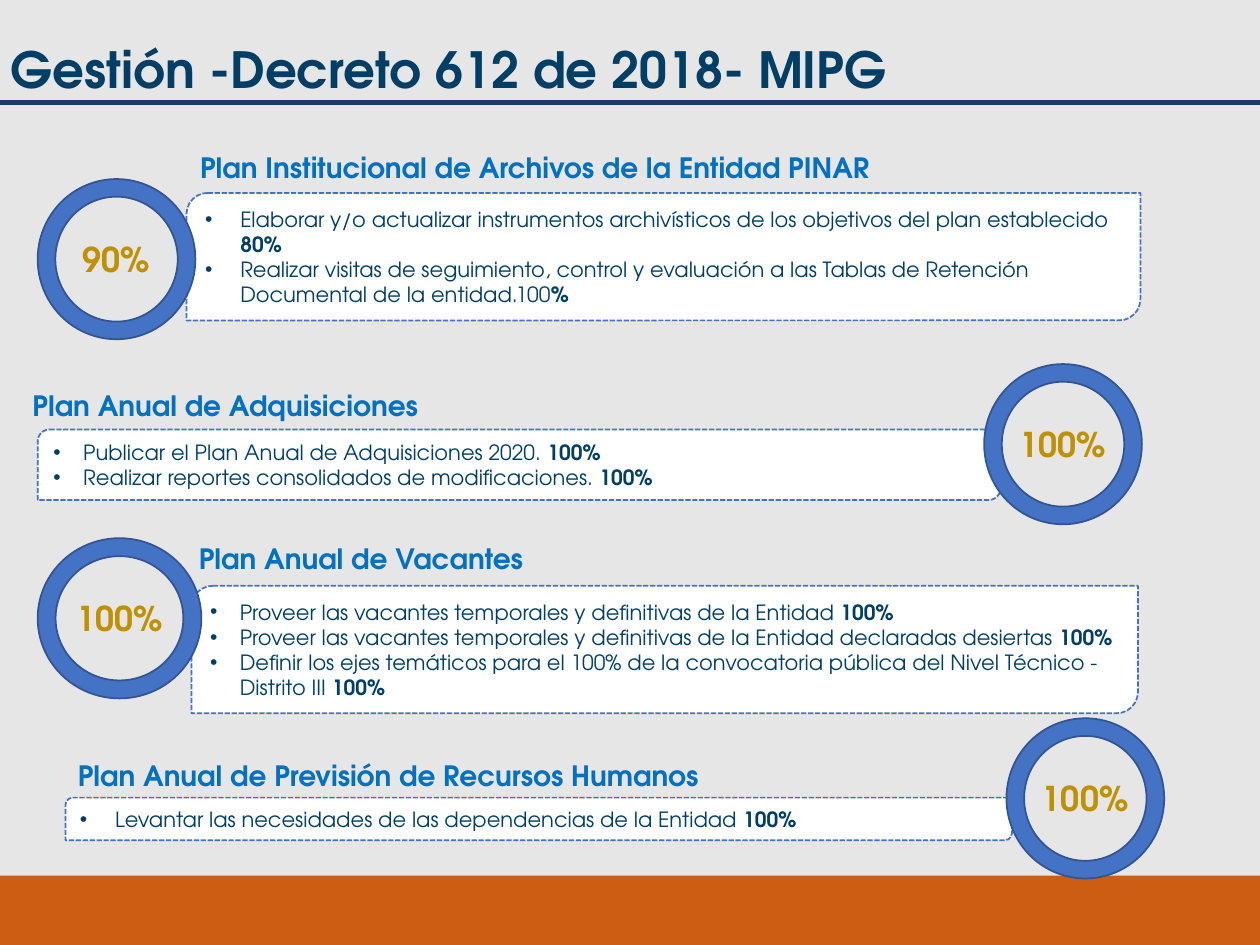
from dataclasses import dataclass

from lxml import etree
from pptx import Presentation
from pptx.dml.color import RGBColor
from pptx.enum.dml import MSO_LINE
from pptx.enum.shapes import MSO_CONNECTOR, MSO_SHAPE
from pptx.enum.text import MSO_ANCHOR, PP_ALIGN
from pptx.oxml.ns import qn
from pptx.util import Cm, Pt

RECT, DONUT = MSO_SHAPE.RECTANGLE, MSO_SHAPE.DONUT
PANEL = MSO_SHAPE.ROUND_2_DIAG_RECTANGLE
STRAIGHT = MSO_CONNECTOR.STRAIGHT
DASH = MSO_LINE.SQUARE_DOT
LEFT, CENTER = PP_ALIGN.LEFT, PP_ALIGN.CENTER
MIDDLE = MSO_ANCHOR.MIDDLE


@dataclass(frozen=True)
class Theme:
    font: str = "TeX Gyre Adventor"
    back: str = "E7E6E6"
    band: str = "CC5D12"
    rule: str = "203864"
    ink: str = "003E65"
    head: str = "0070C0"
    gold: str = "BF9000"
    ring: str = "4472C4"
    edge: str = "325491"
    panel: str = "FFFFFF"
    title_size: float = 28.5
    head_size: float = 16
    ring_size: float = 19.5
    body_size: float = 12


@dataclass(frozen=True)
class Box:
    """A frame in centimetres."""
    left: float
    top: float
    width: float
    height: float

    def cm(self) -> tuple:
        return Cm(self.left), Cm(self.top), Cm(self.width), Cm(self.height)


@dataclass(frozen=True)
class Plan:
    name: str
    score: str
    head: Box
    ring: Box
    panel: Box
    indent: float
    tasks: tuple  # pairs of plain text and bold ending
    fit: bool = False  # heading is centred and does not wrap


THEME = Theme()
HEAD, RING = 0.94, 3.23
PLANS = (
    Plan("Plan Institucional de Archivos de la Entidad PINAR", "90%",
         Box(3.61, 2.92, 14.35, HEAD), Box(0.76, 3.61, 3.18, RING),
         Box(3.76, 3.89, 19.23, 2.57), 0.71,
         (("Elaborar y/o actualizar instrumentos archivísticos de los "
           "objetivos del plan establecido ", "80%"),
          ("Realizar visitas de seguimiento, control y evaluación a las Tablas "
           "de Retención Documental de la entidad.100", "%")), True),
    Plan("Plan Anual de Adquisiciones", "100%",
         Box(0.38, 7.7, 8.33, HEAD), Box(19.84, 7.34, 3.18, RING),
         Box(0.76, 8.66, 19.41, 1.42), 0.6,
         (("Publicar el Plan Anual de Adquisiciones 2020. ", "100%"),
          ("Realizar reportes consolidados de modificaciones. ", "100%")), True),
    Plan("Plan Anual de Vacantes", "100%",
         Box(3.76, 10.8, 7.72, HEAD), Box(0.76, 10.85, 3.3, RING),
         Box(3.86, 11.81, 19.08, 2.57), 0.6,
         (("Proveer las vacantes temporales y definitivas de la Entidad ",
           "100%"),
          ("Proveer las vacantes temporales y definitivas de la Entidad "
           "declaradas desiertas ", "100%"),
          ("Definir los ejes temáticos para el 100% de la convocatoria pública "
           "del Nivel Técnico - Distrito III ", "100%"))),
    Plan("Plan Anual de Previsión de Recursos Humanos", "100%",
         Box(1.32, 15.16, 16.26, HEAD), Box(20.29, 14.48, 3.18, RING),
         Box(1.32, 16.08, 19.08, 0.86), 0.71,
         (("Levantar las necesidades de las dependencias de la Entidad ",
           "100%"),)),
)


def style(font, size: float, color: str, bold=None) -> None:
    font.name, font.size, font.bold = THEME.font, Pt(size), bold
    font.color.rgb = RGBColor.from_string(color)


def add_form(shapes, kind, box: Box, fill: str, edge: str = ""):
    """Add a flat preset shape; without an edge colour it has no outline."""
    form = shapes.add_shape(kind, *box.cm())
    form.shadow.inherit = False
    form.fill.solid()
    form.fill.fore_color.rgb = RGBColor.from_string(fill)
    if edge:
        form.line.color.rgb = RGBColor.from_string(edge)
        form.line.width = Pt(1)
    else:
        form.line.fill.background()
    return form


def add_text(shapes, box: Box, text: str, size: float, color: str,
             align=LEFT, wrap: bool = True):
    frame = shapes.add_textbox(*box.cm()).text_frame
    frame.word_wrap = wrap
    line = frame.paragraphs[0]
    line.text, line.alignment = text, align
    style(line.font, size, color, True)
    return frame


def add_bullet(line, indent: float) -> None:
    props = line._p.get_or_add_pPr()
    props.set("marL", str(Cm(indent)))
    props.set("indent", str(-Cm(indent)))
    etree.SubElement(props, qn("a:buFont"), typeface="Arial")
    etree.SubElement(props, qn("a:buChar"), char="•")


def add_panel(shapes, plan: Plan) -> None:
    form = add_form(shapes, PANEL, plan.panel, THEME.panel, THEME.ring)
    form.line.dash_style = DASH
    frame = form.text_frame
    frame.word_wrap, frame.vertical_anchor = True, MIDDLE
    for i, (text, share) in enumerate(plan.tasks):
        line = frame.add_paragraph() if i else frame.paragraphs[0]
        line.alignment = LEFT
        add_bullet(line, plan.indent)
        style(line.font, THEME.body_size, THEME.ink)
        line.add_run().text = text
        end = line.add_run()
        end.text, end.font.bold = share, True


def add_ring(shapes, plan: Plan) -> None:
    group = shapes.add_group_shape().shapes
    ring = plan.ring
    form = add_form(group, DONUT, ring, THEME.ring, THEME.edge)
    form.adjustments[0] = 0.112
    label = Box(ring.left, ring.top + 1.07, ring.width, 1.09)
    add_text(group, label, plan.score, THEME.ring_size, THEME.gold, CENTER)


def add_plan(shapes, plan: Plan) -> None:
    add_panel(shapes, plan)
    add_text(shapes, plan.head, plan.name, THEME.head_size, THEME.head,
             CENTER if plan.fit else LEFT, not plan.fit)
    add_ring(shapes, plan)


def add_rule(shapes) -> None:
    rule = shapes.add_connector(STRAIGHT, 0, Cm(2.06), Cm(25.4), Cm(2.06))
    rule.line.color.rgb = RGBColor.from_string(THEME.rule)
    rule.line.width = Pt(3)
    etree.SubElement(rule._element.spPr, qn("a:effectLst"))


def main() -> None:
    deck = Presentation()
    deck.slide_width, deck.slide_height = Cm(25.4), Cm(19.05)
    slide = deck.slides.add_slide(deck.slide_layouts[6])
    slide.background.fill.solid()
    slide.background.fill.fore_color.rgb = RGBColor.from_string(THEME.back)
    shapes = slide.shapes
    add_form(shapes, RECT, Box(0, 17.65, 25.4, 1.4), THEME.band)
    add_rule(shapes)
    title = add_text(shapes, Box(-0.03, 0.74, 21.44, 1.3),
                     "Gestión -Decreto 612 de 2018- MIPG",
                     THEME.title_size, THEME.ink)
    title.vertical_anchor = MIDDLE
    for plan in PLANS:
        add_plan(shapes, plan)
    deck.save("out.pptx")


if __name__ == "__main__":
    main()
